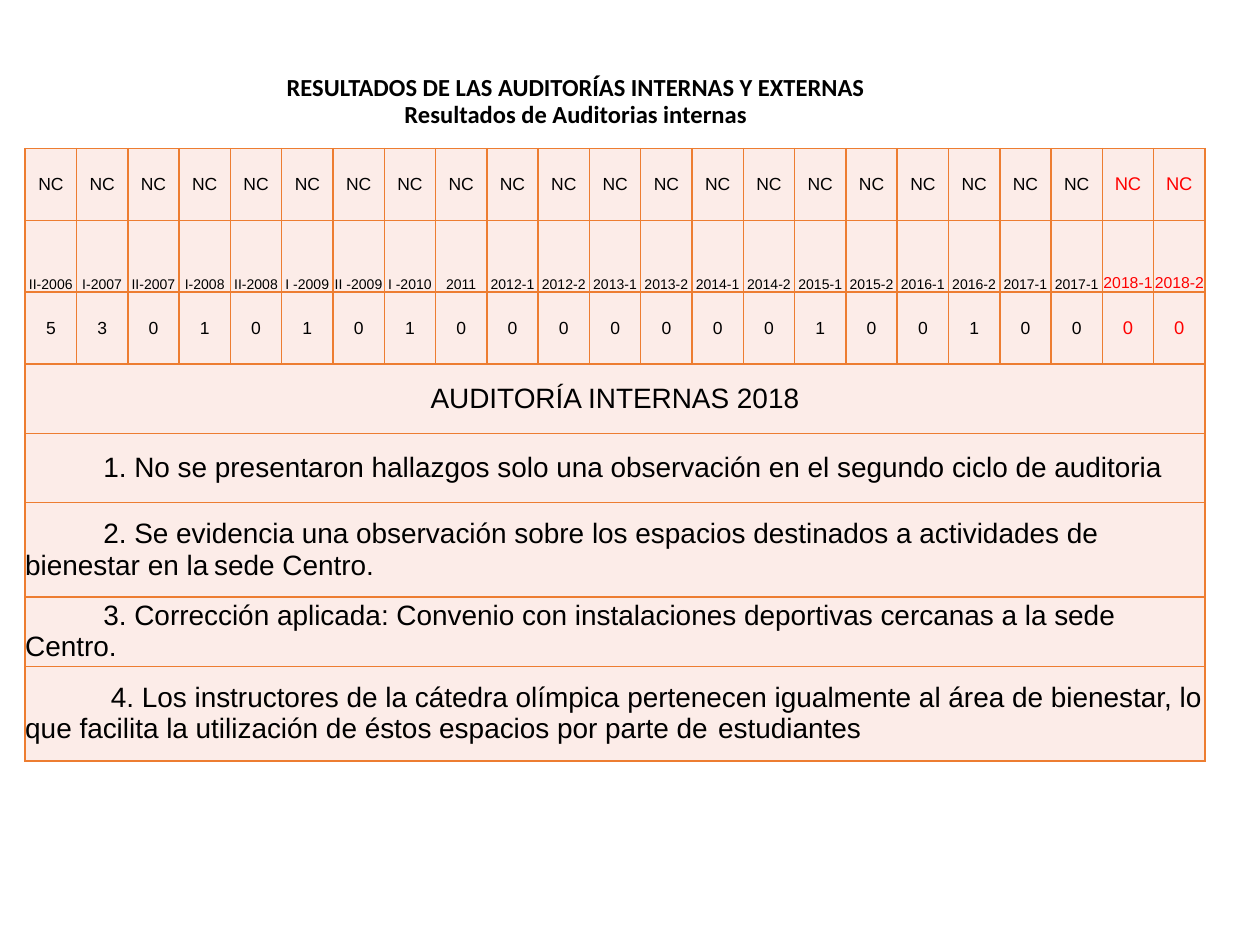
from pptx import Presentation
from pptx.dml.color import RGBColor
from pptx.enum.text import MSO_ANCHOR, PP_ALIGN
from pptx.oxml import parse_xml
from pptx.oxml.ns import nsdecls
from pptx.util import Inches, Pt

BLACK, RED, PINK, ORANGE = "000000", "FF0000", "FCECE8", "ED7D31"
TITLE = "RESULTADOS DE LAS AUDITORÍAS INTERNAS Y EXTERNAS\vResultados de Auditorias internas"
CYCLES = [
    "II-2006", "I-2007", "II-2007", "I-2008", "II-2008", "I -2009", "II -2009", "I -2010",
    "2011", "2012-1", "2012-2", "2013-1", "2013-2", "2014-1", "2014-2", "2015-1",
    "2015-2", "2016-1", "2016-2", "2017-1", "2017-1", "2018-1", "2018-2",
]
COUNTS = "53010101000000010010000"
HEADING = "AUDITORÍA INTERNAS 2018"
NOTES = [
    ("1. No se presentaron hallazgos solo una observación en el segundo ciclo de auditoria", 0.62, None),
    ("2. Se evidencia una observación sobre los espacios destinados a actividades de "
     "bienestar en la\tsede Centro.", 0.62, 2.99),
    ("3. Corrección aplicada: Convenio con instalaciones deportivas cercanas a la sede Centro.", 0.62, None),
    ("4. Los instructores de la cátedra olímpica pertenecen igualmente al área de bienestar, "
     "lo que facilita la utilización de éstos espacios por parte de\testudiantes", 0.68, 5.85),
]
HEIGHTS = [0.57, 0.57, 0.57, 0.55, 0.55, 0.75, 0.55, 0.75]
WIDTH = 9.37
INSETS = ("margin_left", "margin_top", "margin_right", "margin_bottom")


def tint(code):
    return RGBColor.from_string(code)


def apply(item, values):
    for name, value in values.items():
        setattr(item, name, value)


def write(frame, text, size, color=BLACK, face="Arial", bold=False,
          align=PP_ALIGN.CENTER, indent=0, tab=None):
    para = frame.paragraphs[0]
    para.text = text
    props = para._p.get_or_add_pPr()
    if indent:
        apply_indent = {"marL": "0", "indent": str(Inches(indent))}
        for name, value in apply_indent.items():
            props.set(name, value)
    if tab:
        props.append(parse_xml(
            f'<a:tabLst {nsdecls("a")}><a:tab pos="{Inches(tab)}" algn="l"/></a:tabLst>'))
    para.alignment = align
    for run in para.runs:
        apply(run.font, {"name": face, "size": Pt(size), "bold": bold})
        run.font.color.rgb = tint(color)
    return para


def add_title(slide):
    box = slide.shapes.add_textbox(Inches(0.67), Inches(0.44), Inches(7.8), Inches(0.74))
    apply(box.text_frame, {"word_wrap": True, "vertical_anchor": MSO_ANCHOR.MIDDLE})
    para = write(box.text_frame, TITLE, 14, face="Calibri", bold=True)
    para.line_spacing = 0.9


def style(cell):
    apply(cell, dict.fromkeys(INSETS, 0))
    cell.vertical_anchor = MSO_ANCHOR.MIDDLE
    props = cell._tc.get_or_add_tcPr()
    for side in ("lnL", "lnR", "lnT", "lnB"):
        props.append(parse_xml(
            f'<a:{side} {nsdecls("a")} w="{Pt(1)}"><a:solidFill>'
            f'<a:srgbClr val="{ORANGE}"/></a:solidFill></a:{side}>'))
    cell.fill.solid()
    cell.fill.fore_color.rgb = tint(PINK)


def add_grid(slide):
    count = len(CYCLES)
    table = slide.shapes.add_table(
        len(HEIGHTS), count, Inches(0.2), Inches(1.18),
        Inches(WIDTH), Inches(sum(HEIGHTS))).table
    apply(table, {"first_row": False, "horz_banding": False})
    for col in table.columns:
        col.width = Inches(WIDTH / count)
    for row, height in zip(table.rows, HEIGHTS):
        row.height = Inches(height)
    for cell in table.iter_cells():
        style(cell)
    return table


def fill_counts(table):
    last = len(CYCLES) - 2
    rows = [(["NC"] * len(CYCLES), 10, 10.5), (CYCLES, 8, 9), (COUNTS, 10, 10.5)]
    for row, (texts, size, large) in enumerate(rows):
        for col, text in enumerate(texts):
            cell = table.cell(row, col)
            look = (large, RED) if col >= last else (size, BLACK)
            write(cell.text_frame, text, *look)
            if row == 1:
                cell.vertical_anchor = MSO_ANCHOR.BOTTOM


def span(table, row):
    cell = table.cell(row, 0)
    cell.merge(table.cell(row, len(CYCLES) - 1))
    return cell.text_frame


def fill_notes(table):
    write(span(table, 3), HEADING, 16)
    for row, (text, indent, tab) in enumerate(NOTES, 4):
        write(span(table, row), text, 16, align=PP_ALIGN.LEFT, indent=indent, tab=tab)


def main():
    deck = Presentation()
    apply(deck, {"slide_width": Inches(10), "slide_height": Inches(7.5)})
    slide = deck.slides.add_slide(deck.slide_layouts[6])
    add_title(slide)
    table = add_grid(slide)
    fill_counts(table)
    fill_notes(table)
    deck.save("out.pptx")


if __name__ == "__main__":
    main()
